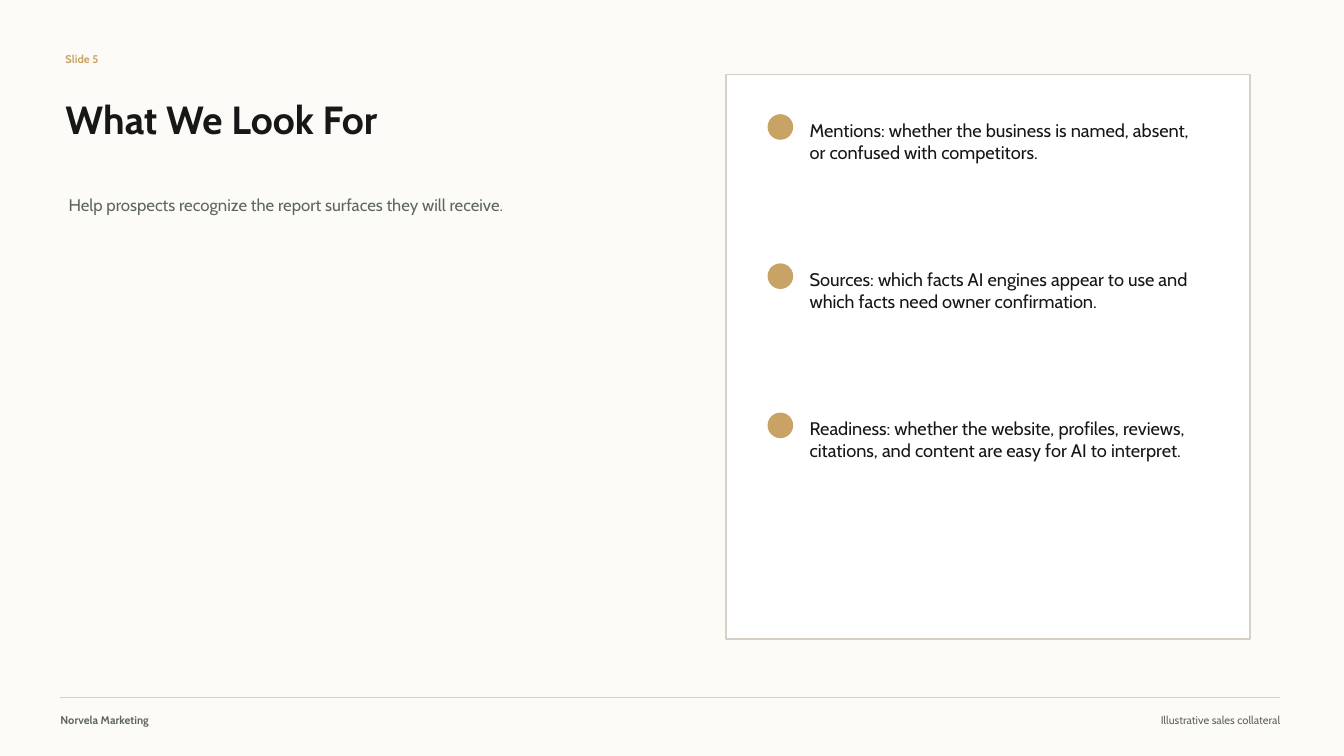
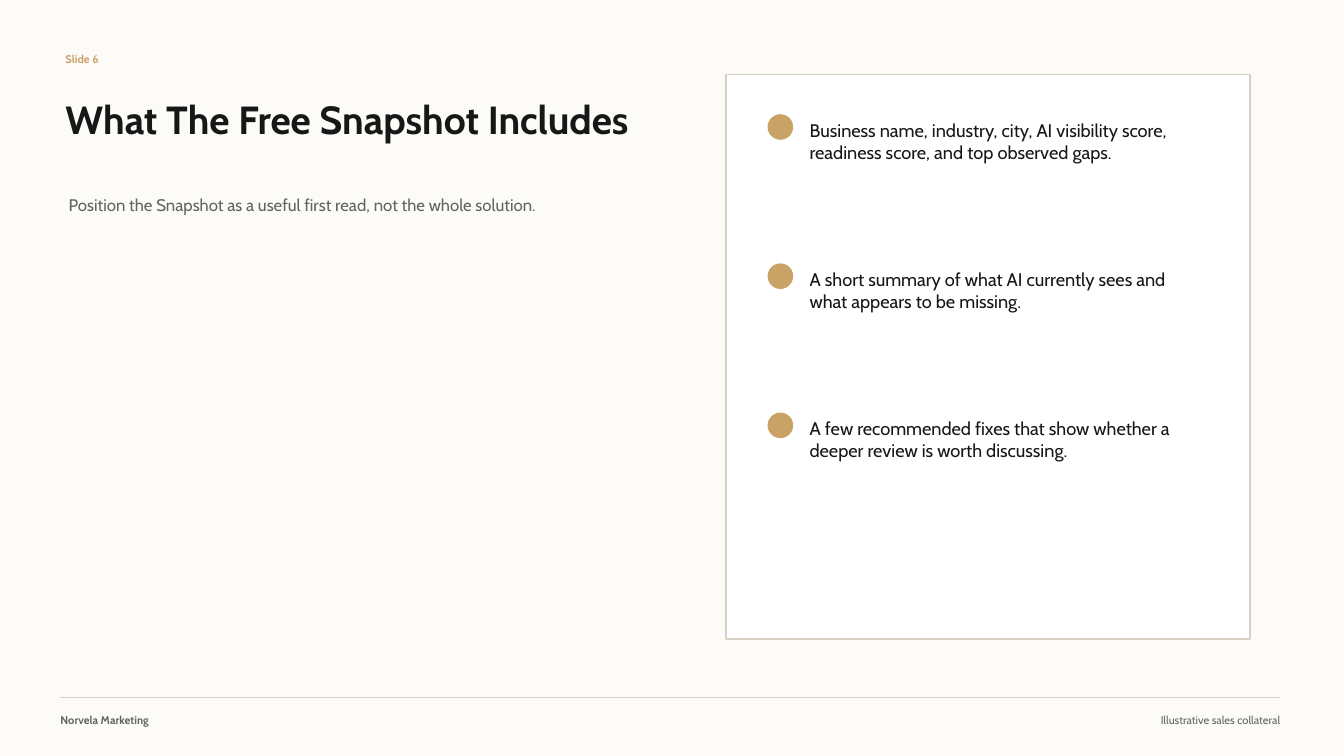
from pptx import Presentation
from pptx.dml.color import RGBColor
from pptx.enum.shapes import MSO_CONNECTOR, MSO_SHAPE
from pptx.enum.text import MSO_ANCHOR, PP_ALIGN
from pptx.oxml.ns import qn
from pptx.util import Inches, Pt
from lxml import etree

FONT = "Cabin"
PAPER, WHITE, INK = "FCFBF7", "FFFFFF", "171717"
MUTED, GOLD, RULE = "5F665F", "C9A366", "D7D1C5"
FOOTER_LEFT, FOOTER_RIGHT = "Norvela Marketing", "Illustrative sales collateral"

SLIDES = [
    ("Slide 5", "What We Look For",
     "Help prospects recognize the report surfaces they will receive.",
     ["Mentions: whether the business is named, absent, or confused with competitors.",
      "Sources: which facts AI engines appear to use and which facts need owner confirmation.",
      "Readiness: whether the website, profiles, reviews, citations, and content "
      "are easy for AI to interpret."]),
    ("Slide 6", "What The Free Snapshot Includes",
     "Position the Snapshot as a useful first read, not the whole solution.",
     ["Business name, industry, city, AI visibility score, readiness score, "
      "and top observed gaps.",
      "A short summary of what AI currently sees and what appears to be missing.",
      "A few recommended fixes that show whether a deeper review is worth discussing."]),
]


def color(fmt, hex_color):
    """Give a fill or a line one solid colour."""
    if hasattr(fmt, "solid"):
        fmt.solid()
        fmt.fore_color.rgb = RGBColor.from_string(hex_color)
    else:
        color(fmt.fill, hex_color)


def add_text(s, text, x, y, w, h, size, ink, bold=False, align=PP_ALIGN.LEFT):
    tf = s.shapes.add_textbox(Inches(x), Inches(y), Inches(w), Inches(h)).text_frame
    tf.word_wrap = True
    tf.vertical_anchor = MSO_ANCHOR.MIDDLE
    tf.margin_left = tf.margin_right = tf.margin_top = tf.margin_bottom = 0
    p = tf.paragraphs[0]
    p.alignment = align
    r = p.add_run()
    r.text = text
    r.font.name, r.font.size, r.font.bold = FONT, Pt(size), bold
    color(r.font.fill, ink)


def add_shape(s, kind, x, y, w, h, fill, line):
    sp = s.shapes.add_shape(kind, Inches(x), Inches(y), Inches(w), Inches(h))
    sp.shadow.inherit = False
    color(sp.fill, fill)
    color(sp.line, line)
    sp.line.width = Pt(1)


def add_heading(s, x, y, label, title, subtitle):
    add_text(s, label, x, y, 1.2, 0.22, 8, GOLD, bold=True)
    add_text(s, title, x, y + 0.34, 6.4, 0.72, 28, INK, bold=True)
    add_text(s, subtitle, x + 0.03, y + 1.24, 5.9, 0.62, 12, MUTED)


def add_points_card(s, x, y, w, h, points):
    add_shape(s, MSO_SHAPE.RECTANGLE, x, y, w, h, WHITE, RULE)
    for i, point in enumerate(points):
        top = y + 0.4 + i * 1.48
        add_shape(s, MSO_SHAPE.OVAL, x + 0.42, top, 0.24, 0.24, GOLD, GOLD)
        add_text(s, point, x + 0.83, top - 0.05, w - 1.35, 0.62, 13, INK)


def add_footer(s, x, y, w):
    right = x + w
    rule = s.shapes.add_connector(MSO_CONNECTOR.STRAIGHT, Inches(x), Inches(y),
                                  Inches(right), Inches(y))
    color(rule.line, RULE)
    rule.line.width = Pt(1)
    etree.SubElement(rule._element.spPr, qn("a:effectLst"))
    add_text(s, FOOTER_LEFT, x, y + 0.11, 3.4, 0.22, 8, MUTED, bold=True)
    add_text(s, FOOTER_RIGHT, right - 3.1, y + 0.11, 3.1, 0.22, 8, MUTED,
             align=PP_ALIGN.RIGHT)


def add_points_slide(prs, label, title, subtitle, points):
    s = prs.slides.add_slide(prs.slide_layouts[6])
    color(s.background.fill, PAPER)
    add_heading(s, 0.65, 0.48, label, title, subtitle)
    add_points_card(s, 7.2, 0.74, 5.2, 5.6, points)
    add_footer(s, 0.6, 6.92, 12.1)


def main():
    prs = Presentation()
    prs.slide_width, prs.slide_height = Inches(13.33), Inches(7.5)
    for content in SLIDES:
        add_points_slide(prs, *content)
    prs.save("out.pptx")


if __name__ == "__main__":
    main()
